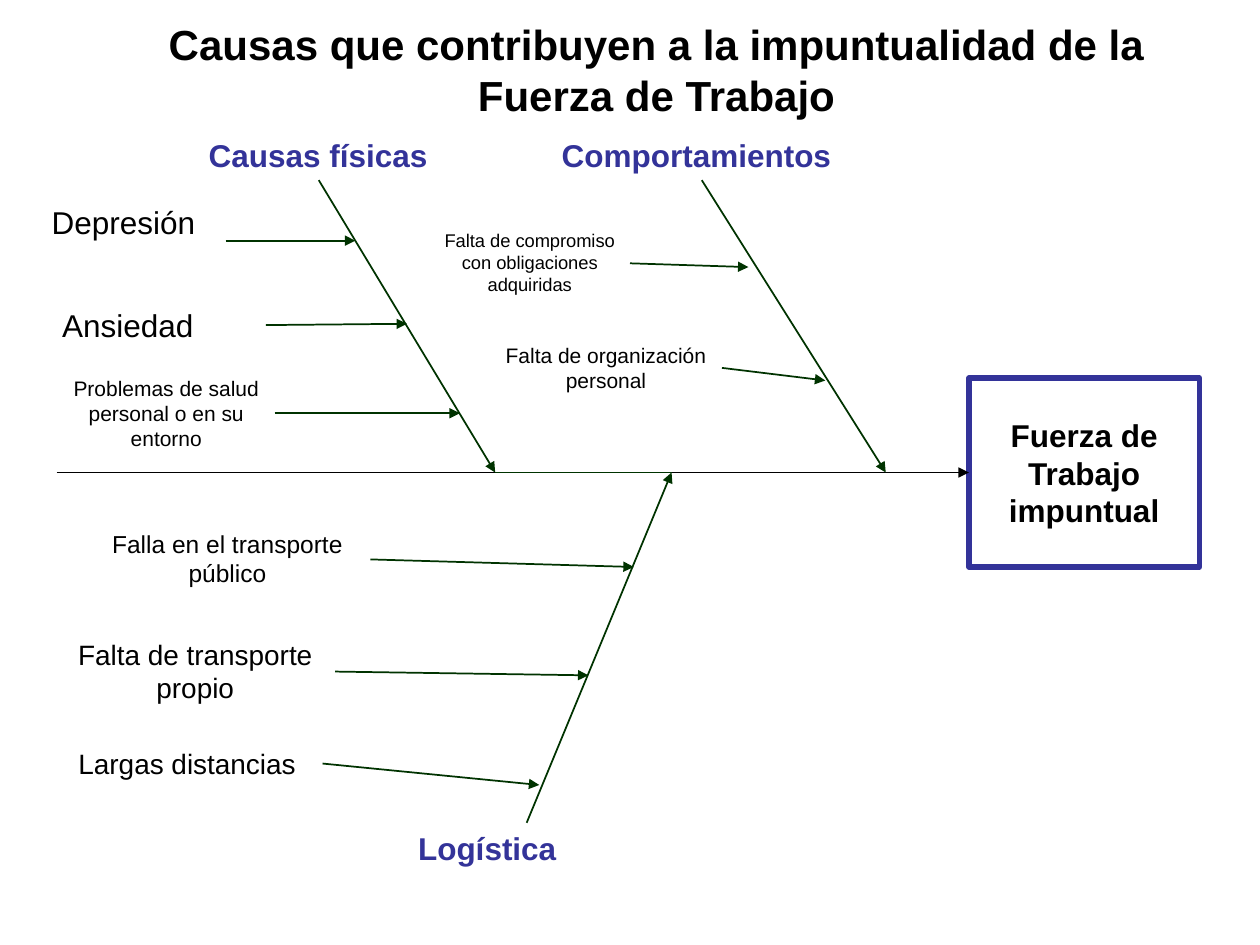
from pptx import Presentation
from pptx.dml.color import RGBColor
from pptx.enum.shapes import MSO_CONNECTOR as Connector, MSO_SHAPE as Shape
from pptx.enum.text import MSO_ANCHOR as Anchor, PP_ALIGN as Align
from pptx.util import Inches, Pt
from lxml.etree import SubElement
from pptx.oxml.ns import qn

BLACK = RGBColor(0x00, 0x00, 0x00)
BLUE = RGBColor(0x33, 0x33, 0x99)
GREEN = RGBColor(0x00, 0x33, 0x00)

SPINE_Y = 3.75
TITLE = ("Causas que contribuyen a la impuntualidad de la Fuerza de Trabajo",
         (1.12, 0.1, 8.18, 0.91))
EFFECT = (["Fuerza de", "Trabajo", "impuntual"], (7.69, 3, 1.83, 1.5))

BRANCHES = [
    {
        "heading": ("Causas físicas", (0.93, 1.03, 3.19, 0.4), Align.CENTER),
        "bone": ((2.53, 1.43), (3.93, SPINE_Y)),
        "causes": [
            ("Depresión", 18, (0.2, 1.56, 1.56, 0.4), (1.79, 1.91), (2.82, 1.91)),
            ("Ansiedad", 18, (0.18, 2.38, 1.67, 0.4), (2.11, 2.58), (3.23, 2.57)),
            ("Problemas de salud personal o en su entorno", 12,
             (0.46, 2.93, 1.72, 0.71), (2.18, 3.28), (3.65, 3.28)),
        ],
    },
    {
        "heading": ("Comportamientos", (4.36, 1.03, 2.42, 0.4), Align.LEFT),
        "bone": ((5.57, 1.43), (7.03, SPINE_Y)),
        "causes": [
            ("Falta de compromiso con obligaciones adquiridas", 10.5,
             (3.41, 1.77, 1.59, 0.63), (5, 2.09), (5.94, 2.12)),
            ("Falta de organización personal", 12,
             (3.89, 2.67, 1.84, 0.5), (5.73, 2.92), (6.55, 3.02)),
        ],
    },
    {
        "heading": ("Logística", (3.22, 6.53, 1.92, 0.4), Align.LEFT),
        "bone": ((4.18, 6.53), (5.33, SPINE_Y)),
        "causes": [
            ("Falla en el transporte público", 14,
             (0.66, 4.15, 2.29, 0.57), (2.94, 4.44), (5.03, 4.5)),
            ("Falta de transporte propio", 16,
             (0.45, 5.01, 2.2, 0.64), (2.66, 5.33), (4.67, 5.36)),
            ("Largas distancias", 16,
             (0.41, 5.88, 2.15, 0.37), (2.56, 6.06), (4.28, 6.23)),
        ],
    },
]
SPINE_STOPS = [0.45, 3.93, 5.33, 7.03, EFFECT[1][0]]
SPINE_COLORS = [BLACK, GREEN, BLACK, BLACK]


def write(frame, lines, size, color=BLACK, bold=False, align=Align.CENTER):
    font_format = {"name": "Arial", "size": Pt(size), "bold": bold}
    for index, line in enumerate(lines):
        paragraph = frame.paragraphs[0] if index == 0 else frame.add_paragraph()
        paragraph.alignment = align
        run = paragraph.add_run()
        run.text = line
        for key, value in font_format.items():
            setattr(run.font, key, value)
        run.font.color.rgb = color


def add_label(slide, text, box, size, **style):
    frame = slide.shapes.add_textbox(*map(Inches, box)).text_frame
    frame.word_wrap = True
    write(frame, [text], size, **style)


def add_line(slide, start, end, color=GREEN, arrow=True):
    line = slide.shapes.add_connector(Connector.STRAIGHT, *map(Inches, (*start, *end)))
    line.line.color.rgb = color
    line.line.width = Pt(1)
    if arrow:
        SubElement(line.line._get_or_add_ln(), qn("a:tailEnd"), type="triangle")
    SubElement(line._element.spPr, qn("a:effectLst"))
    return line


def add_effect(slide):
    lines, box = EFFECT
    effect = slide.shapes.add_shape(Shape.RECTANGLE, *map(Inches, box))
    effect.shadow.inherit = False
    effect.fill.background()
    effect.line.color.rgb = BLUE
    effect.line.width = Pt(3)
    effect.text_frame.word_wrap = False
    effect.text_frame.vertical_anchor = Anchor.MIDDLE
    write(effect.text_frame, lines, 18, bold=True)
    return effect


def add_spine(slide, effect):
    for left, right, color in zip(SPINE_STOPS, SPINE_STOPS[1:], SPINE_COLORS):
        last = right == SPINE_STOPS[-1]
        segment = add_line(slide, (left, SPINE_Y), (right, SPINE_Y), color, arrow=last)
        if last:
            segment.end_connect(effect, 1)


def add_branch(slide, branch):
    heading, box, align = branch["heading"]
    add_label(slide, heading, box, 18, color=BLUE, bold=True, align=align)
    add_line(slide, *branch["bone"])
    for cause, size, box, start, end in branch["causes"]:
        add_label(slide, cause, box, size)
        add_line(slide, start, end)


def main():
    deck = Presentation()
    deck.slide_width, deck.slide_height = Inches(10), Inches(7.5)
    slide = deck.slides.add_slide(deck.slide_layouts[6])
    add_label(slide, *TITLE, 24, bold=True)
    add_spine(slide, add_effect(slide))
    for branch in BRANCHES:
        add_branch(slide, branch)
    deck.save("out.pptx")


if __name__ == "__main__":
    main()
